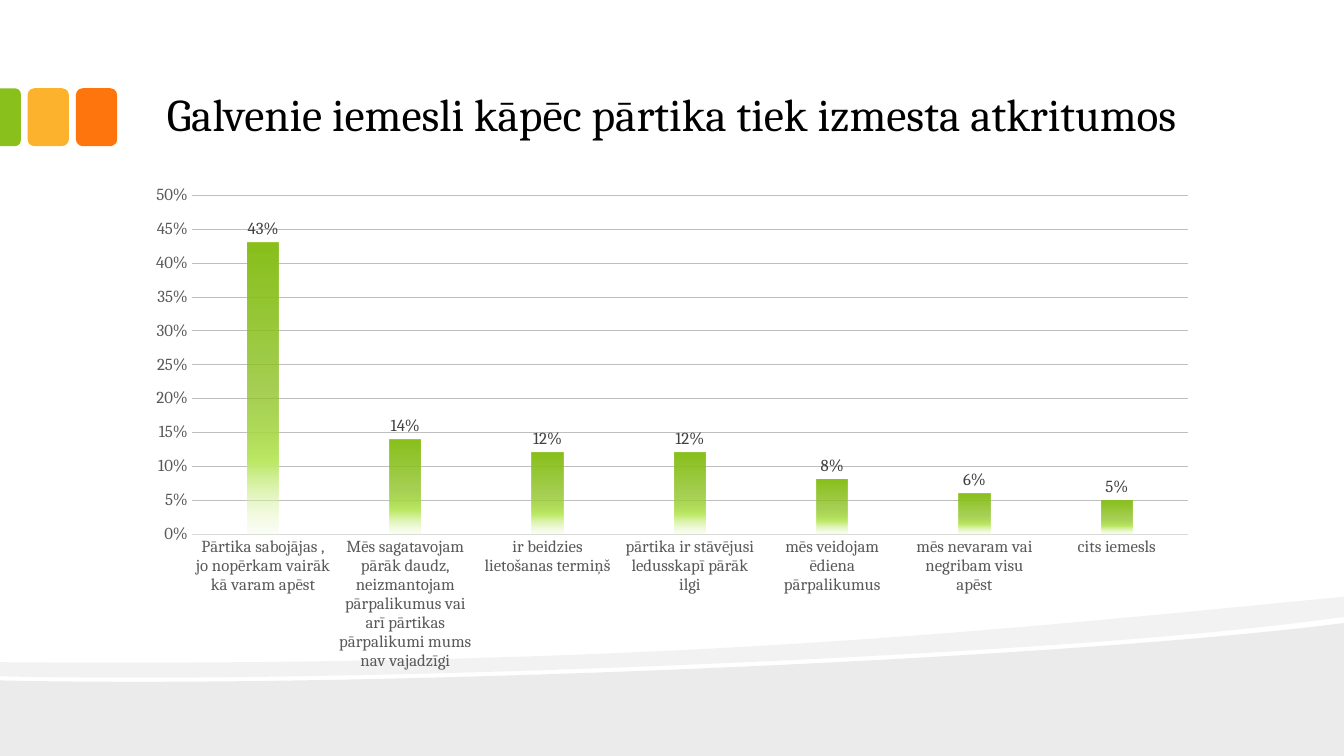
from lxml.etree import SubElement
from pptx import Presentation
from pptx.chart.data import CategoryChartData
from pptx.dml.color import RGBColor
from pptx.enum.chart import XL_CHART_TYPE as ChartType, XL_LABEL_POSITION as LabelPosition
from pptx.enum.chart import XL_TICK_MARK as TickMark
from pptx.enum.shapes import MSO_SHAPE as Preset
from pptx.enum.text import MSO_ANCHOR as Anchor, PP_ALIGN as Align
from pptx.oxml import parse_xml
from pptx.oxml.ns import nsdecls, qn
from pptx.util import Pt

FONT = "Cambria"
BLACK = RGBColor(0x00, 0x00, 0x00)
GREEN = RGBColor(0x89, 0xC0, 0x1C)
YELLOW = RGBColor(0xFC, 0xB2, 0x2C)
ORANGE = RGBColor(0xFE, 0x75, 0x0E)
LIME = RGBColor(0xBD, 0xE9, 0x67)
PALE_LIME = RGBColor(0xE9, 0xF8, 0xCC)
LABEL_GREY = RGBColor(0x40, 0x40, 0x40)
AXIS_GREY = RGBColor(0x59, 0x59, 0x59)
GRID_GREY = RGBColor(0xBF, 0xBF, 0xBF)
LINE_GREY = RGBColor(0xD9, 0xD9, 0xD9)

REASONS = {
    "Pārtika sabojājas , jo nopērkam vairāk kā varam apēst": 0.43,
    "Mēs sagatavojam pārāk daudz, neizmantojam pārpalikumus vai arī "
    "pārtikas pārpalikumi mums nav vajadzīgi": 0.14,
    "ir beidzies lietošanas termiņš": 0.12,
    "pārtika ir stāvējusi ledusskapī pārāk ilgi": 0.12,
    "mēs veidojam ēdiena pārpalikumus": 0.08,
    "mēs nevaram vai negribam visu apēst": 0.06,
    "cits iemesls": 0.05,
}
# Each stop: position in percent, colour, opacity in percent
BAR_STOPS = [(0, GREEN, 100), (51, GREEN, 75), (75, LIME, 100), (100, PALE_LIME, 15)]

# Each outline: a start, then segments of one point (line) or three (curve)
LOWER_BAND = [
    [(960, 445)], [(960, 540)], [(0, 540)], [(0, 486)],
    [(253.4, 491.8), (750, 471.6), (960, 445)],
]
UPPER_BAND = [
    [(960, 426.2)], [(960, 440.6)],
    [(904, 448.6), (827, 455.8), (741, 461.5)],
    [(502.6, 477.4), (185.8, 487.4), (0, 483.1)],
    [(0, 473)],
    [(469.4, 476.6), (699, 451.4), (960, 426.2)],
]


class SlidePainter:
    def __init__(self, page, font):
        self.page = page
        self.font = font

    def style_font(self, font, size, color):
        font.name = self.font
        font.size = Pt(size)
        font.color.rgb = color

    def paint(self, shape, color):
        shape.shadow.inherit = False
        shape.fill.solid()
        shape.fill.fore_color.rgb = color
        shape.line.fill.background()

    def band(self, segments, opacity):
        """Draw a black, see-through outline with lines and curves."""
        start, *corners = [(Pt(x), Pt(y)) for segment in segments for x, y in segment]
        builder = self.page.shapes.build_freeform(*start, scale=1.0)
        builder.add_line_segments(corners, close=True)
        shape = builder.convert_to_shape()
        self.paint(shape, BLACK)
        color = next(shape.fill._xPr.iter(qn("a:srgbClr")))
        SubElement(color, qn("a:alpha"), val=str(opacity * 1000))

        lines = iter(list(shape._element.iter(qn("a:lnTo"))))
        for segment in segments[1:]:
            steps = [next(lines) for _ in segment]
            if len(steps) == 3:
                curve = parse_xml(f'<a:cubicBezTo {nsdecls("a")}/>')
                steps[0].addprevious(curve)
                for step in steps:
                    curve.append(step[0])
                    step.getparent().remove(step)

    def tile(self, preset, left, top, width, height, color, rotation=0):
        shape = self.page.shapes.add_shape(preset, Pt(left), Pt(top), Pt(width), Pt(height))
        self.paint(shape, color)
        shape.rotation = rotation
        return shape

    def title(self, text, left, top, width, height, size):
        box = self.page.shapes.add_textbox(Pt(left), Pt(top), Pt(width), Pt(height))
        frame = box.text_frame
        frame.word_wrap = True
        frame.vertical_anchor = Anchor.BOTTOM
        frame.margin_left = frame.margin_right = Pt(9.6)
        frame.margin_top = frame.margin_bottom = Pt(4.8)
        para = frame.paragraphs[0]
        para.text = text
        para.alignment = Align.CENTER
        self.style_font(para.font, size, BLACK)

    def column_chart(self, values, left, top, width, height):
        data = CategoryChartData(number_format="0%")
        data.categories = list(values)
        data.add_series("Series 1", list(values.values()))
        chart = self.page.shapes.add_chart(ChartType.COLUMN_CLUSTERED, Pt(left), Pt(top),
                                           Pt(width), Pt(height), data).chart
        chart.has_legend = False
        chart.has_title = False
        self.style_font(chart.font, 10, BLACK)
        self.style_axes(chart)

        plot = chart.plots[0]
        plot.gap_width = 355
        plot.overlap = -70
        plot.vary_by_categories = False
        plot.has_data_labels = True
        labels = plot.data_labels
        labels.show_value = True
        labels.position = LabelPosition.OUTSIDE_END
        labels.number_format = "0%"
        labels.number_format_is_linked = False
        self.style_font(labels.font, 12, LABEL_GREY)
        self.fade(plot.series[0])
        self.place_plot(chart, x=0.0535, y=0.038, w=0.927, h=0.672)

    def style_axes(self, chart):
        for axis in (chart.category_axis, chart.value_axis):
            axis.major_tick_mark = axis.minor_tick_mark = TickMark.NONE
            self.style_font(axis.tick_labels.font, 12, AXIS_GREY)
        base = chart.category_axis.format.line
        base.color.rgb = LINE_GREY
        base.width = Pt(0.75)
        scale = chart.value_axis
        scale.minimum_scale, scale.maximum_scale, scale.major_unit = 0, 0.5, 0.05
        scale.tick_labels.number_format = "0%"
        scale.tick_labels.number_format_is_linked = False
        scale.format.line.fill.background()
        scale.has_major_gridlines = True
        scale.major_gridlines.format.line.color.rgb = GRID_GREY
        scale.major_gridlines.format.line.width = Pt(0.75)

    def fade(self, series):
        """Fill the bars with the downward gradient."""
        stops = "".join(
            f'<a:gs pos="{position * 1000}"><a:srgbClr val="{color}">'
            f'<a:alpha val="{opacity * 1000}"/></a:srgbClr></a:gs>'
            for position, color, opacity in BAR_STOPS)
        series.format.fill.solid()
        solid = next(series._element.iter(qn("a:solidFill")))
        solid.getparent().replace(solid, parse_xml(
            f'<a:gradFill {nsdecls("a")}><a:gsLst>{stops}</a:gsLst>'
            '<a:lin ang="5400000" scaled="0"/></a:gradFill>'))
        series.format.line.fill.background()

    def place_plot(self, chart, **fractions):
        """Fix the inner plot area as fractions of the chart."""
        area = next(chart._chartSpace.iter(qn("c:plotArea")))
        for old in area.findall(qn("c:layout")):
            area.remove(old)
        sizes = "".join(f'<c:{key} val="{value}"/>' for key, value in fractions.items())
        area.insert(0, parse_xml(
            f'<c:layout {nsdecls("c")}><c:manualLayout><c:layoutTarget val="inner"/>'
            f'<c:xMode val="edge"/><c:yMode val="edge"/>{sizes}</c:manualLayout></c:layout>'))


def main():
    deck = Presentation()
    deck.slide_width, deck.slide_height = Pt(960), Pt(540)
    page = deck.slides.add_slide(deck.slide_layouts[6])
    painter = SlidePainter(page, FONT)

    painter.band(LOWER_BAND, opacity=8)
    painter.band(UPPER_BAND, opacity=5)

    for left, color in ((54.2, ORANGE), (19.7, YELLOW)):
        painter.tile(Preset.ROUNDED_RECTANGLE, left, 63, 29.5, 41.4, color)
    edge_tile = painter.tile(Preset.ROUND_2_SAME_RECTANGLE, -13.2, 76.3, 41.4, 14.9,
                             GREEN, rotation=90)
    edge_tile.adjustments[0] = 0.292
    edge_tile.adjustments[1] = 0

    painter.title("Galvenie iemesli kāpēc pārtika tiek izmesta atkritumos",
                  96, 12, 767.5, 93.6, size=32.4)
    painter.column_chart(REASONS, 96, 126, 767.5, 360)
    deck.save("out.pptx")


if __name__ == "__main__":
    main()
